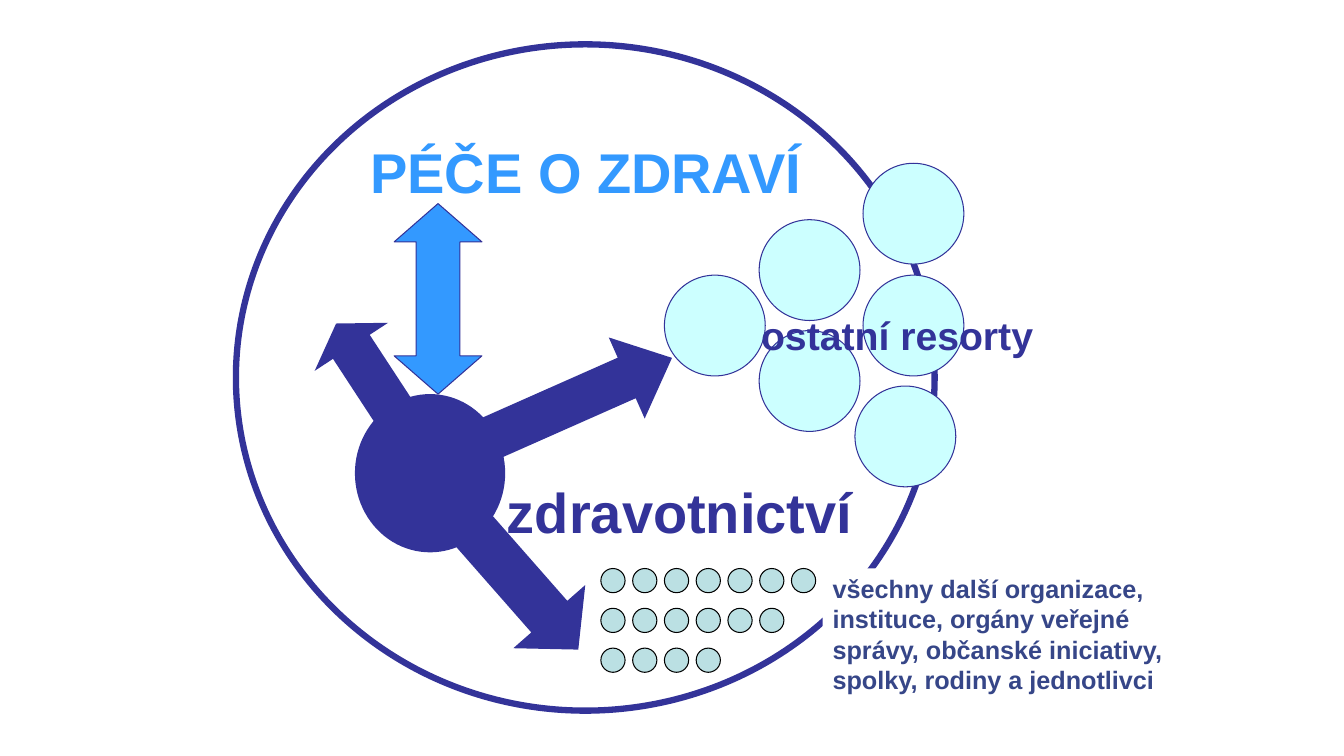
from pptx import Presentation
from pptx.dml.color import RGBColor
from pptx.enum.shapes import MSO_SHAPE as Shape
from pptx.enum.text import MSO_ANCHOR as Anchor, PP_ALIGN as Align
from pptx.util import Inches, Pt

NAVY, BLUE, WHITE = "333399", "3399FF", "FFFFFF"
PALE, TEAL, BLACK, SLATE = "CCFFFF", "BBE0E3", "000000", "364688"

TITLE = "PÉČE O ZDRAVÍ"
HEALTH_SERVICE = "zdravotnictví"
OTHER_SECTORS = "ostatní resorty"
OTHER_BODIES = ("všechny další organizace, instituce, orgány veřejné správy, "
                "občanské iniciativy, spolky, rodiny a jednotlivci")

# kind, (left, top, width, height), rotation, head length
HUB_ARROWS = [
    (Shape.UP_ARROW, (3.2, 3.12, 0.87, 1.1), 326.8, 0.318),
    (Shape.RIGHT_ARROW, (4.78, 3.51, 1.97, 0.88), 336.1, 0.558),
    (Shape.RIGHT_ARROW, (4.3, 5.32, 1.73, 0.95), 48.7, 0.458),
]
SECTOR_SIZE = 1
SECTORS = [(7.53, 2.18), (6.59, 2.73), (7.53, 3.28),
           (8.56, 1.62), (8.56, 2.73), (8.48, 3.83)]
DOT_SIZE = 0.24
DOT_LEFT, DOT_TOP = 5.96, 5.64
DOT_STEP_X, DOT_STEP_Y = 0.315, 0.395
DOTS_PER_ROW = [7, 6, 4]

deck = Presentation()
deck.slide_width, deck.slide_height = Inches(13.33), Inches(7.5)
page = deck.slides.add_slide(deck.slide_layouts[6])


def color(value):
    return RGBColor.from_string(value)


def add_figure(kind, place, fill, line=None, weight=0.75):
    figure = page.shapes.add_shape(kind, *map(Inches, place))
    figure.shadow.inherit = False
    figure.fill.solid()
    figure.fill.fore_color.rgb = color(fill)
    if line:
        figure.line.color.rgb = color(line)
        figure.line.width = Pt(weight)
    else:
        figure.line.fill.background()
    return figure


def add_arrow(kind, place, rotation, head, fill, line=None):
    arrow = add_figure(kind, place, fill, line)
    arrow.rotation = rotation
    arrow.adjustments[0] = 0.5
    arrow.adjustments[1] = head


def add_label(text, place, size, ink, align=Align.LEFT, anchor=Anchor.TOP):
    box = page.shapes.add_textbox(*map(Inches, place))
    frame = box.text_frame
    frame.word_wrap = True
    frame.vertical_anchor = anchor
    para = frame.paragraphs[0]
    para.text = text
    para.alignment = align
    para.font.name = "Arial"
    para.font.size = Pt(size)
    para.font.bold = True
    para.font.color.rgb = color(ink)
    return box


add_figure(Shape.OVAL, (2.34, 0.44, 6.93, 6.61), WHITE, NAVY, 4.5)
add_label(TITLE, (1.31, 1.07, 9, 1.25), 40, BLUE, Align.CENTER, Anchor.MIDDLE)
add_label(HEALTH_SERVICE, (4.93, 4.69, 3.78, 0.77), 40, NAVY)

for kind, place, rotation, head in HUB_ARROWS:
    add_arrow(kind, place, rotation, head, NAVY)
add_figure(Shape.OVAL, (3.52, 3.91, 1.49, 1.57), NAVY)
add_arrow(Shape.LEFT_RIGHT_ARROW, (3.4, 2.53, 1.89, 0.87), 270, 0.436, BLUE, NAVY)

for left, top in SECTORS:
    add_figure(Shape.OVAL, (left, top, SECTOR_SIZE, SECTOR_SIZE), PALE, NAVY)
add_label(OTHER_SECTORS, (7.45, 3.04, 3.31, 0.57), 28, NAVY)

for row, count in enumerate(DOTS_PER_ROW):
    for column in range(count):
        left = DOT_LEFT + column * DOT_STEP_X
        top = DOT_TOP + row * DOT_STEP_Y
        add_figure(Shape.OVAL, (left, top, DOT_SIZE, DOT_SIZE), TEAL, BLACK)

bodies = add_label(OTHER_BODIES, (8.16, 5.64, 3.66, 1.3), 18, SLATE)
bodies.fill.solid()
bodies.fill.fore_color.rgb = color(WHITE)

deck.save("out.pptx")
